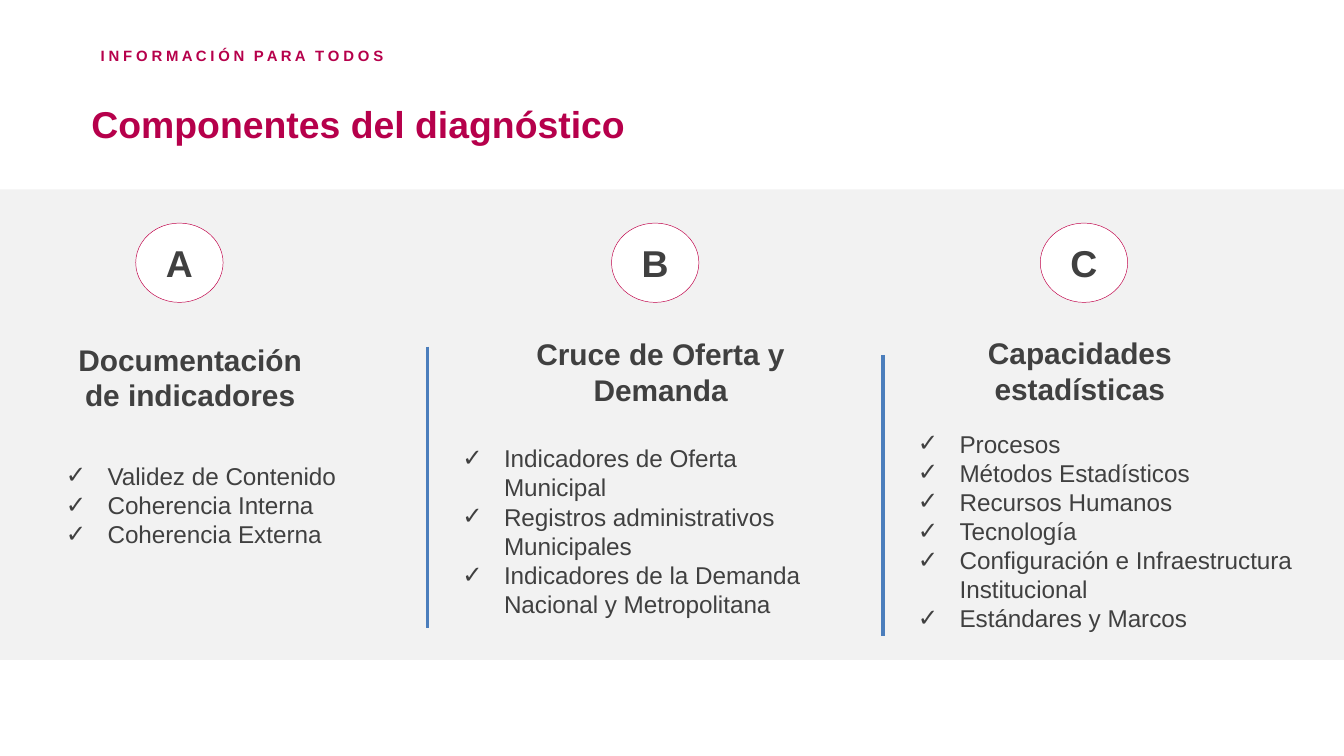
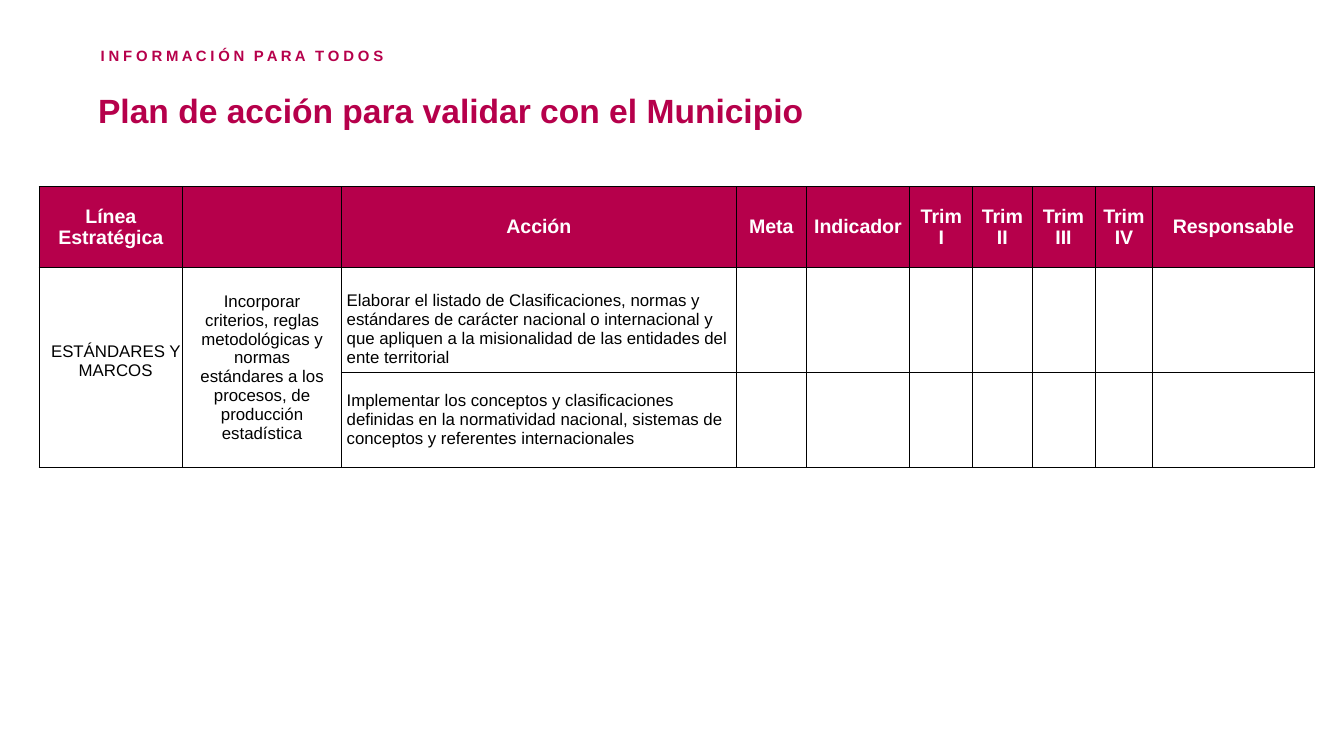
"""Build two slides: the components of the diagnosis and the action plan."""
from lxml.etree import SubElement
from pptx import Presentation
from pptx.dml.color import RGBColor
from pptx.enum.shapes import MSO_CONNECTOR, MSO_SHAPE
from pptx.enum.text import MSO_ANCHOR, MSO_AUTO_SIZE, PP_ALIGN
from pptx.oxml import parse_xml
from pptx.oxml.ns import nsdecls, qn
from pptx.util import Pt

PX = 9144
FONT = "Arial"
CRIMSON = RGBColor(0xB6, 0x00, 0x4B)
RING = RGBColor(0xC0, 0x00, 0x48)
CHARCOAL = RGBColor(0x40, 0x40, 0x40)
BLUE = RGBColor(0x4B, 0x7E, 0xBC)
PALE = RGBColor(0xF2, 0xF2, 0xF2)
WHITE = RGBColor(0xFF, 0xFF, 0xFF)
BLACK = RGBColor(0x00, 0x00, 0x00)


def place(shape, left, top, width, height):
    shape.left, shape.top = left * PX, top * PX
    shape.width, shape.height = width * PX, height * PX


def style(frame, size, color, bold=False, align=PP_ALIGN.LEFT, anchor=MSO_ANCHOR.TOP):
    frame.word_wrap = True
    frame.auto_size = MSO_AUTO_SIZE.NONE
    frame.vertical_anchor = anchor
    for paragraph in frame.paragraphs:
        paragraph.alignment = align
        paragraph.space_before = Pt(0)
        for run in paragraph.runs:
            run.font.name = FONT
            run.font.size = Pt(size)
            run.font.bold = bold
            run.font.color.rgb = color


prs = Presentation()
prs.slide_width = 1000 * PX
prs.slide_height = prs.slide_width * 9 // 16
components = prs.slides.add_slide(prs.slide_layouts[4])
plan = prs.slides.add_slide(prs.slide_layouts[5])

motto = components.shapes.add_textbox(74 * PX, 29 * PX, 307 * PX, 19 * PX)
motto_line = motto.text_frame.paragraphs[0]
for index, word in enumerate(("I N F O R M A C I Ó N", "P A R A", "T O D O S")):
    if index:
        gap = motto_line.add_run()
        gap.text = " "
        gap._r.get_or_add_rPr().set("spc", "275")
    letters = motto_line.add_run()
    letters.text = word
    letters._r.get_or_add_rPr().set("spc", "-10")
style(motto.text_frame, 8, CRIMSON, bold=True)
motto.text_frame.margin_left = PX
motto.text_frame.margin_top = 2 * PX
motto.text_frame.margin_right = motto.text_frame.margin_bottom = 0
motto_line.line_spacing = 1.3
prs.slide_master.shapes.element.append(motto.element)

for slide, heading, size, area in (
    (components, "Componentes del diagnóstico", 20, (67, 75, 677, 34)),
    (plan, "Plan de acción para validar con el Municipio", 18, (72, 67, 651, 61)),
):
    title = slide.shapes.title
    place(title, *area)
    frame = title.text_frame
    frame.text = heading
    frame.margin_left = PX
    frame.margin_top = frame.margin_right = frame.margin_bottom = 0
    style(frame, size, CRIMSON, bold=True)

band = components.shapes.add_shape(MSO_SHAPE.RECTANGLE, 0, 141 * PX, 1000 * PX, 350 * PX)
band.shadow.inherit = False
band.fill.solid()
band.fill.fore_color.rgb = PALE
band.line.fill.background()
components.shapes.element.insert(2, band.element)

for x, y in ((318, 258), (657, 264)):
    divider = components.shapes.add_connector(
        MSO_CONNECTOR.STRAIGHT, x * PX, y * PX, x * PX, (y + 209) * PX)
    divider.line.color.rgb = BLUE
    divider.line.width = Pt(2)
    SubElement(divider.element.spPr, qn("a:effectLst"))

COMPONENTS = (
    ("A", 101, "Documentación de indicadores", (39, 249), (39, 338, 283, 98),
     ("Validez de Contenido", "Coherencia Interna", "Coherencia Externa")),
    ("B", 455, "Cruce de Oferta y Demanda", (389, 245), (334, 325, 305, 141),
     ("Indicadores de Oferta Municipal", "Registros administrativos Municipales",
      "Indicadores de la Demanda Nacional y Metropolitana")),
    ("C", 774, "Capacidades estadísticas", (701, 244), (673, 314, 339, 163),
     ("Procesos", "Métodos Estadísticos", "Recursos Humanos", "Tecnología",
      "Configuración e Infraestructura Institucional", "Estándares y Marcos")),
)
*aspect_lists, spare = list(components.placeholders)[1:]
spare.element.getparent().remove(spare.element)

for aspects, (letter, badge_x, name, (name_x, name_y), area, items) in zip(aspect_lists, COMPONENTS):
    place(aspects, *area)
    aspects.text_frame.text = "\n".join(items)
    for paragraph in aspects.text_frame.paragraphs:
        properties = paragraph._p.get_or_add_pPr()
        properties.set("marL", str(31 * PX))
        properties.set("indent", str(-31 * PX))
        SubElement(properties, qn("a:buFont")).set("typeface", FONT)
        SubElement(properties, qn("a:buChar")).set("char", "✓")
    style(aspects.text_frame, 13, CHARCOAL)

    caption = components.shapes.add_textbox(name_x * PX, name_y * PX, 205 * PX, 64 * PX)
    caption.text_frame.text = name
    style(caption.text_frame, 16, CHARCOAL, bold=True, align=PP_ALIGN.CENTER)

    badge = components.shapes.add_shape(
        MSO_SHAPE.OVAL, badge_x * PX, 166 * PX, 65 * PX, 59 * PX)
    badge.shadow.inherit = False
    badge.fill.solid()
    badge.fill.fore_color.rgb = WHITE
    badge.line.color.rgb = RING
    badge.line.width = Pt(0.25)
    badge.text_frame.text = letter
    style(badge.text_frame, 20, CHARCOAL, True, PP_ALIGN.CENTER, MSO_ANCHOR.MIDDLE)

COLUMN_WIDTHS = (107, 118, 294, 52, 77, 47, 44, 47, 43, 120)
ROW_HEIGHTS = (60, 78, 71)
HEADERS = ("Línea Estratégica", "", "Acción", "Meta", "Indicador",
           "Trim\nI", "Trim\nII", "Trim\nIII", "Trim\nIV", "Responsable")
ACTIONS = {
    (1, 0): ("ESTÁNDARES Y MARCOS", PP_ALIGN.CENTER, MSO_ANCHOR.MIDDLE, (8, 1, 1, 11)),
    (1, 1): ("Incorporar criterios, reglas metodológicas y normas estándares a los "
             "procesos, de producción estadística",
             PP_ALIGN.CENTER, MSO_ANCHOR.MIDDLE, (9, 4, 9, 4)),
    (1, 2): ("Elaborar el listado de Clasificaciones, normas y estándares de carácter "
             "nacional o internacional y que apliquen a la misionalidad de las entidades "
             "del ente territorial", PP_ALIGN.LEFT, MSO_ANCHOR.BOTTOM, (4, 4, 4, 4)),
    (2, 2): ("Implementar los conceptos y clasificaciones definidas en la normatividad "
             "nacional, sistemas de conceptos y referentes internacionales",
             PP_ALIGN.LEFT, MSO_ANCHOR.MIDDLE, (4, 4, 4, 4)),
}
entries = {
    (0, column): (header, PP_ALIGN.CENTER, MSO_ANCHOR.MIDDLE, (0, 0, 0, 0))
    for column, header in enumerate(HEADERS) if header
} | ACTIONS

schedule = plan.shapes.add_table(
    len(ROW_HEIGHTS), len(COLUMN_WIDTHS), 29 * PX, 139 * PX,
    sum(COLUMN_WIDTHS) * PX, sum(ROW_HEIGHTS) * PX).table
schedule.horz_banding = False
for column, width in zip(schedule.columns, COLUMN_WIDTHS):
    column.width = width * PX
for row, height in zip(schedule.rows, ROW_HEIGHTS):
    row.height = height * PX
for column in (0, 1):
    schedule.cell(1, column).merge(schedule.cell(2, column))

for row in range(len(ROW_HEIGHTS)):
    for column in range(len(COLUMN_WIDTHS)):
        cell = schedule.cell(row, column)
        if row == 0:
            cell.fill.solid()
            cell.fill.fore_color.rgb = CRIMSON
        else:
            cell.fill.background()
        for index, side in enumerate(("lnL", "lnR", "lnT", "lnB")):
            cell._tc.get_or_add_tcPr().insert(index, parse_xml(
                f'<a:{side} {nsdecls("a")} w="{Pt(0.5)}"><a:solidFill>'
                f'<a:srgbClr val="{BLACK}"/></a:solidFill></a:{side}>'))
        if (row, column) in entries:
            text, align, anchor, (left, top, right, bottom) = entries[row, column]
            cell.text_frame.text = text
            if row == 0:
                style(cell.text_frame, 10.5, WHITE, bold=True, align=align)
            else:
                style(cell.text_frame, 9, BLACK, align=align)
            cell.vertical_anchor = anchor
            cell.margin_left, cell.margin_top = left * PX, top * PX
            cell.margin_right, cell.margin_bottom = right * PX, bottom * PX

prs.save("out.pptx")
